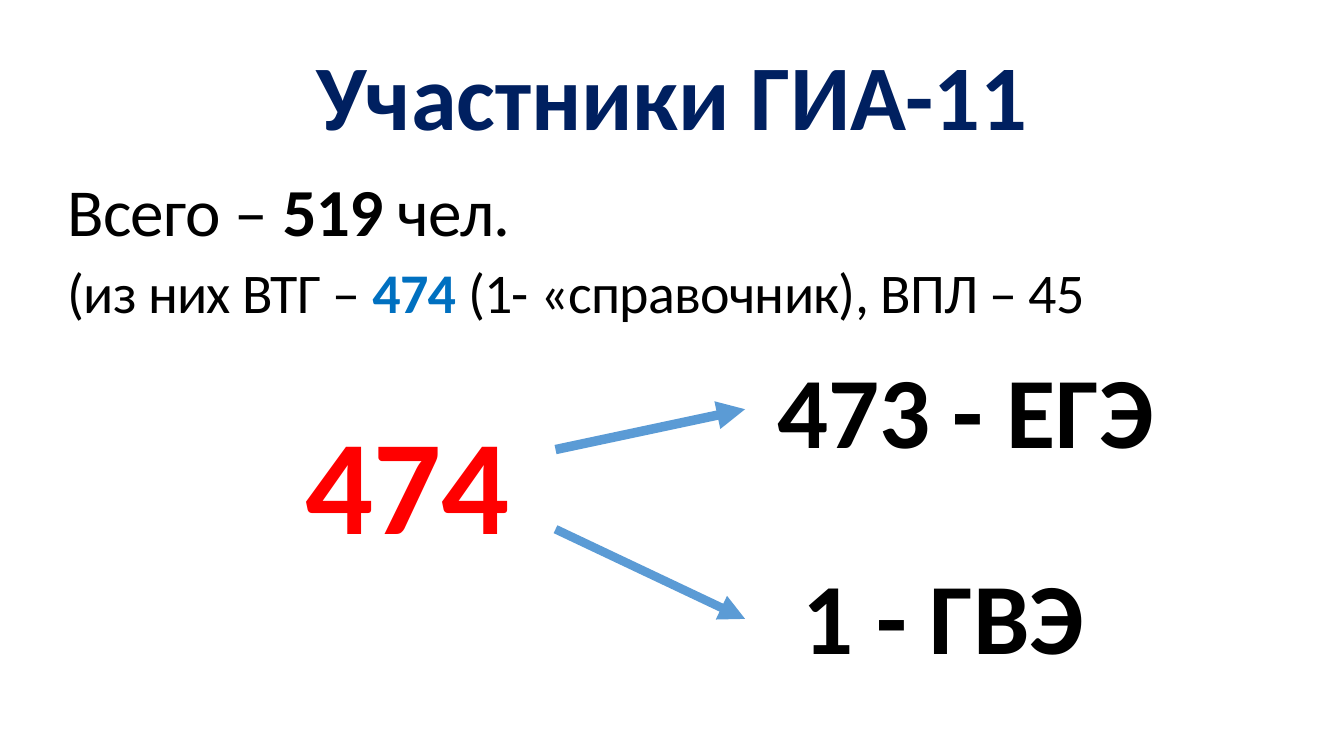
from lxml import etree
from pptx import Presentation
from pptx import util as u
from pptx.dml.color import RGBColor
from pptx.enum import shapes, text
from pptx.oxml.ns import qn

BLACK, NAVY, RED = "000000", "002060", "FF0000"
BLUE, ARROW_BLUE = "0070C0", "5B9BD5"


def color(value):
    return RGBColor.from_string(value)


class SlideBuilder:
    font = "Calibri"

    def __init__(self, slide):
        self.slide = slide

    def frame(self, left, top, width, height, wrap=True):
        box = self.slide.shapes.add_textbox(
            u.Inches(left), u.Inches(top), u.Inches(width), u.Inches(height))
        box.text_frame.word_wrap = wrap
        return box.text_frame

    def style(self, run, size, fill=BLACK, bold=False):
        run.font.name = self.font
        run.font.size = u.Pt(size)
        run.font.bold = bold
        run.font.color.rgb = color(fill)

    def label(self, caption, left, top, width, height, size, fill=BLACK):
        frame = self.frame(left, top, width, height, wrap=False)
        frame.text = caption
        self.style(frame.paragraphs[0].runs[0], size, fill, bold=True)
        return frame

    def title(self, caption, left, top, width, height):
        frame = self.label(caption, left, top, width, height, 66, NAVY)
        frame.word_wrap = True
        frame.vertical_anchor = text.MSO_ANCHOR.MIDDLE
        heading = frame.paragraphs[0]
        heading.alignment = text.PP_ALIGN.CENTER
        heading.line_spacing = 0.9

    def summary(self, lines, left, top, width, height):
        """Each line is a size and its (wording, colour, bold) pieces."""
        frame = self.frame(left, top, width, height)
        for index, (size, pieces) in enumerate(lines):
            line = frame.add_paragraph() if index else frame.paragraphs[0]
            line.alignment = text.PP_ALIGN.JUSTIFY
            line.line_spacing = 0.9
            line.space_before = u.Pt(10)
            for wording, fill, bold in pieces:
                run = line.add_run()
                run.text = wording
                self.style(run, size, fill, bold)
                run.font._element.set("spc", "-50")

    def arrow(self, start, end, width):
        line = self.slide.shapes.add_connector(
            shapes.MSO_CONNECTOR.STRAIGHT, *map(u.Inches, start + end))
        line.line.color.rgb = color(ARROW_BLUE)
        line.line.width = u.Pt(width)
        etree.SubElement(line.line._get_or_add_ln(), qn("a:tailEnd"), type="triangle")
        etree.SubElement(line._element.spPr, qn("a:effectLst"))


def main():
    deck = Presentation()
    deck.slide_width, deck.slide_height = u.Inches(13.33), u.Inches(7.5)
    builder = SlideBuilder(deck.slides.add_slide(deck.slide_layouts[6]))

    # Heading and totals
    builder.title("Участники ГИА-11", 0.92, 0.27, 11.5, 1.45)
    builder.summary([
        (48, [("Всего – ", BLACK, False), ("519", BLACK, True),
              (" чел.", BLACK, False)]),
        (40, [("(из них ВТГ – ", BLACK, False), ("474 ", BLUE, True),
              ("(1- «справочник), ВПЛ – 45", BLACK, False)]),
    ], 0.57, 1.72, 12.21, 1.7)

    # Graduates split by exam form
    builder.label("474", 2.93, 3.92, 2.23, 1.72, 96, RED)
    builder.arrow((5.51, 4.46), (7.39, 4.06), 6.75)
    builder.label("473 - ЕГЭ", 7.61, 3.4, 3.97, 1.31, 72)
    builder.arrow((5.51, 5.25), (7.39, 6.14), 6.25)
    builder.label("1 - ГВЭ", 7.86, 5.44, 3.02, 1.31, 72)

    deck.save("out.pptx")


if __name__ == "__main__":
    main()
